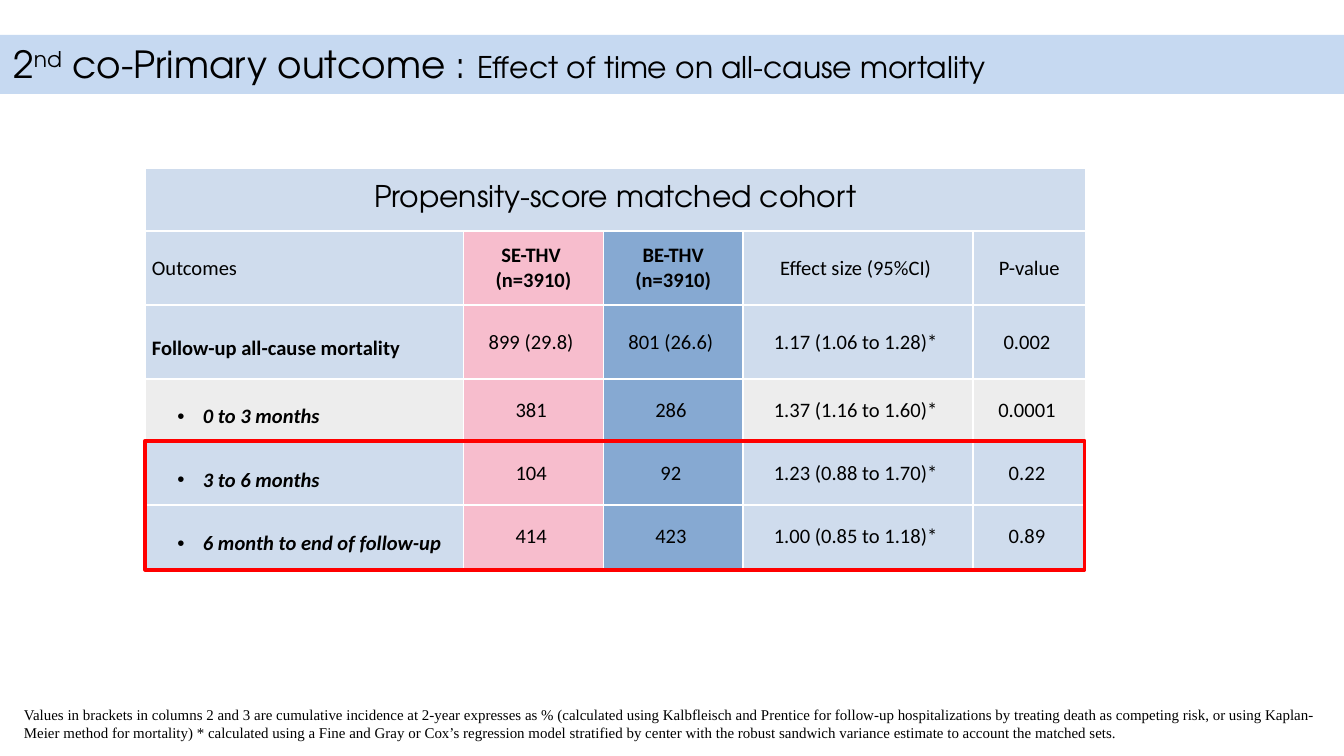
"""Build a slide on the effect of time on all-cause mortality."""
from lxml import etree
from pptx import Presentation
from pptx.dml.color import RGBColor
from pptx.enum.shapes import MSO_SHAPE
from pptx.enum.text import MSO_ANCHOR, PP_ALIGN
from pptx.oxml.ns import qn
from pptx.util import Inches, Pt

RECTANGLE = MSO_SHAPE.RECTANGLE
MIDDLE = MSO_ANCHOR.MIDDLE
CENTER, LEFT = PP_ALIGN.CENTER, PP_ALIGN.LEFT

COLORS = {"blue": "4E81BD", "pink": "F7B8C9", "gray": "BFBFBF", "band": "C6D9F1",
          "white": "FFFFFF", "black": "000000", "red": "FF0000"}
HEADING_FONT, TABLE_FONT, NOTE_FONT = "TeX Gyre Adventor", "Calibri", "Times New Roman"

TITLE = [("2", 20, False), ("nd", 20, True), (" co-Primary outcome : ", 20, False),
         ("Effect of time on all-cause mortality", 16, False)]
COHORT = "Propensity-score matched cohort"
HEADERS = ["Outcomes", "SE-THV \n(n=3910)", "BE-THV\n(n=3910)", "Effect size (95%CI) ", "P-value"]
OUTCOMES = [
    ["Follow-up all-cause mortality", "899 (29.8) ", "801 (26.6) ", "1.17 (1.06 to 1.28)* ", "0.002 "],
    ["0 to 3 months", "381 ", "286 ", "1.37 (1.16 to 1.60)* ", "0.0001 "],
    ["3 to 6 months", "104 ", "92 ", "1.23 (0.88 to 1.70)* ", "0.22 "],
    ["6 month to end of follow-up", "414 ", "423 ", "1.00 (0.85 to 1.18)* ", "0.89 "],
]
NOTE = ("Values in brackets in columns 2 and 3 are cumulative incidence at 2-year expresses as % "
        "(calculated using Kalbfleisch and Prentice for follow-up hospitalizations by treating death "
        "as competing risk, or using Kaplan-Meier method for mortality) * calculated using a Fine and "
        "Gray or Cox’s regression model stratified by center with the robust sandwich variance "
        "estimate to account the matched sets.")

WIDTH = 10
HEIGHT = WIDTH * 9 / 16
TABLE_LEFT, TABLE_TOP = 1.08, 1.25
COLUMN_WIDTHS = [2.37, 1.04, 1.04, 1.71, 0.84]
ROW_HEIGHTS = [0.47, 0.55, 0.55, 0.47, 0.47, 0.47]
HIGHLIGHT = (TABLE_LEFT, 3.28, 6.99, 0.96)
GRAY_ROW, FIRST_BULLET_ROW = 3, 3
ARM_FILLS = {1: ("pink", 92), 2: ("blue", 68)}


def color(name):
    return RGBColor.from_string(COLORS[name])


def format_span(span, font, size, bold=False, italic=False):
    span.font.name, span.font.size = font, Pt(size)
    span.font.bold, span.font.italic = bold, italic
    span.font.color.rgb = color("black")


def add_panel(page, left, top, width, height, fill):
    box = page.shapes.add_textbox(*map(Inches, (left, top, width, height)))
    box.fill.solid()
    box.fill.fore_color.rgb = color(fill)
    box.text_frame.word_wrap = True
    return box.text_frame.paragraphs[0]


def add_borders(cell):
    properties = cell._tc.get_or_add_tcPr()
    for side in ("a:lnL", "a:lnR", "a:lnT", "a:lnB"):
        line = etree.SubElement(properties, qn(side), w=str(Pt(1)))
        fill = etree.SubElement(line, qn("a:solidFill"))
        etree.SubElement(fill, qn("a:srgbClr"), val=COLORS["white"])


def fill_cell(cell, name, opacity):
    cell.fill.solid()
    cell.fill.fore_color.rgb = color(name)
    for tint in cell._tc.tcPr.find(qn("a:solidFill")):
        etree.SubElement(tint, qn("a:alpha"), val=str(opacity * 1000))


def add_bullet(para):
    properties = para._p.get_or_add_pPr()
    properties.set("marL", str(Inches(0.38)))
    properties.set("indent", str(Inches(-0.19)))
    etree.SubElement(properties, qn("a:buFont"), typeface="Arial")
    etree.SubElement(properties, qn("a:buChar"), char="•")


def write_cell(cell, text, row, column):
    label = column == 0 and row > 1
    bullet = label and row >= FIRST_BULLET_ROW
    bold = label or (row == 1 and column in ARM_FILLS)
    font, size = (HEADING_FONT, 16) if row == 0 else (TABLE_FONT, 11)
    cell.vertical_anchor = MIDDLE
    cell.margin_left = cell.margin_right = Inches(0.07 if row > 1 and column else 0.05)
    cell.margin_top = cell.margin_bottom = 0
    cell.text_frame.text = text
    for para in cell.text_frame.paragraphs:
        para.alignment = LEFT if row and column == 0 else CENTER
        if label:
            para.line_spacing = 1.5
        if bullet:
            add_bullet(para)
        for span in para.runs:
            format_span(span, font, size, bold, bullet)


def add_outcome_table(page):
    rows = [[COHORT] + [""] * 4, HEADERS] + OUTCOMES
    table = page.shapes.add_table(
        len(rows), len(HEADERS), Inches(TABLE_LEFT), Inches(TABLE_TOP),
        Inches(sum(COLUMN_WIDTHS)), Inches(sum(ROW_HEIGHTS))).table
    table.first_row = table.horz_banding = False
    for column, width in zip(table.columns, COLUMN_WIDTHS):
        column.width = Inches(width)
    for row, height in zip(table.rows, ROW_HEIGHTS):
        row.height = Inches(height)
    table.cell(0, 0).merge(table.cell(0, len(HEADERS) - 1))
    for r, texts in enumerate(rows):
        for c, text in enumerate(texts):
            cell = table.cell(r, c)
            add_borders(cell)
            base = ("gray" if r == GRAY_ROW else "blue", 27)
            fill_cell(cell, *(ARM_FILLS.get(c, base) if r else base))
            if not cell.is_spanned:
                write_cell(cell, text, r, c)


def add_highlight(page):
    frame = page.shapes.add_shape(RECTANGLE, *map(Inches, HIGHLIGHT))
    frame.shadow.inherit = False
    frame.fill.background()
    frame.line.color.rgb = color("red")
    frame.line.width = Pt(2)


def main():
    deck = Presentation()
    deck.slide_width, deck.slide_height = Inches(WIDTH), Inches(HEIGHT)
    page = deck.slides.add_slide(deck.slide_layouts[6])
    add_outcome_table(page)
    title = add_panel(page, 0, 0.26, WIDTH, 0.44, "band")
    for text, size, raised in TITLE:
        span = title.add_run()
        span.text = text
        format_span(span, HEADING_FONT, size)
        if raised:
            span._r.get_or_add_rPr().set("baseline", "30000")
    note = add_panel(page, 0.08, 5.2, 9.96, 0.37, "white")
    note.text = NOTE
    format_span(note.runs[0], NOTE_FONT, 8)
    add_highlight(page)
    deck.save("out.pptx")


if __name__ == "__main__":
    main()
